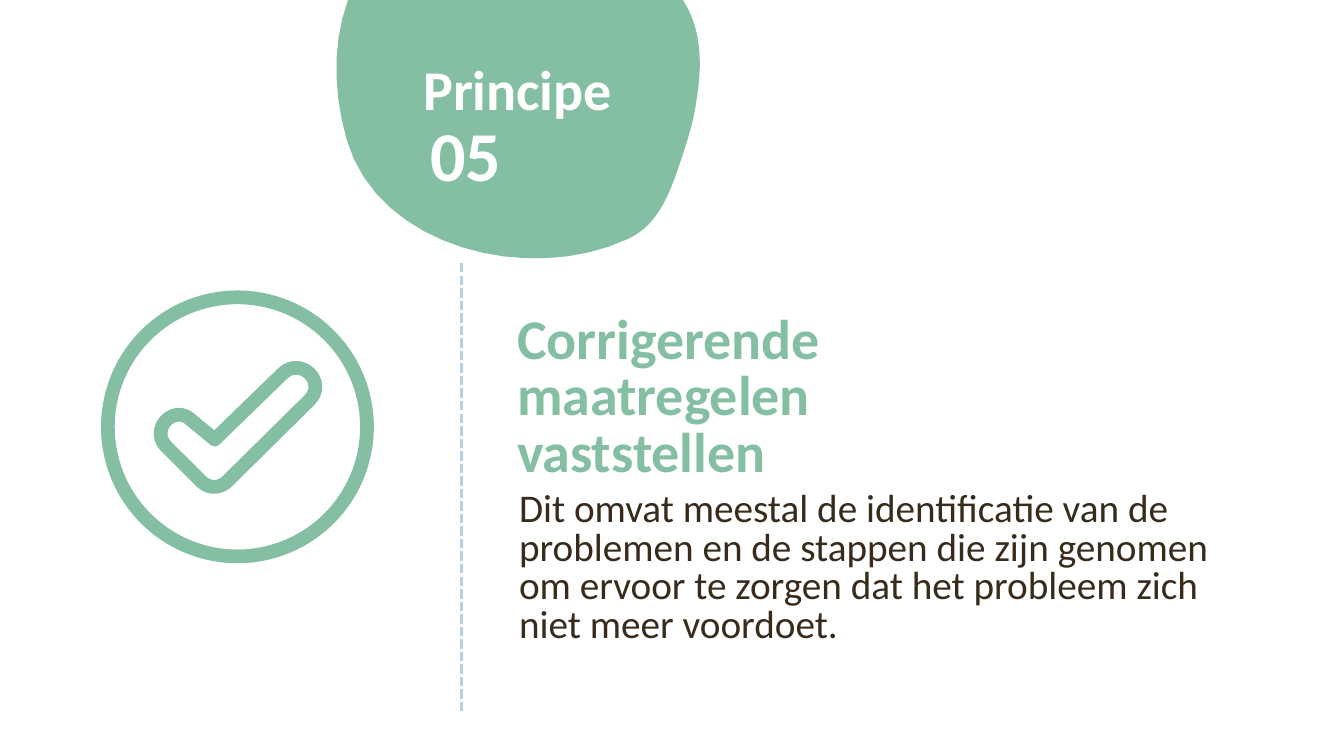
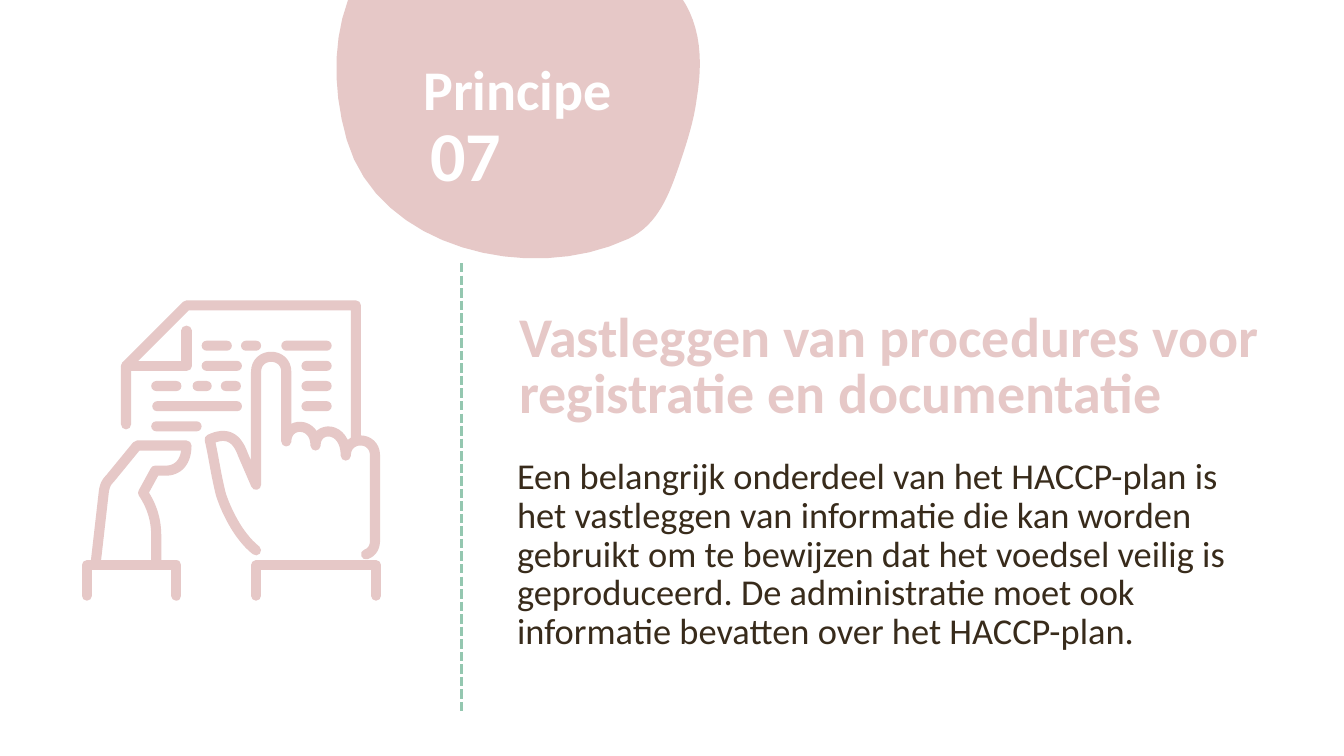
"""Build two slides that each present one HACCP principle."""
import dataclasses

import lxml.etree
import pptx
import pptx.dml.color
import pptx.enum.dml
import pptx.enum.shapes
import pptx.oxml.ns
import pptx.util


@dataclasses.dataclass(frozen=True)
class Theme:
    font: str = "Calibri"
    green: str = "84BFA4"
    pink: str = "E6C8C7"
    blue: str = "B6D1E1"
    mint: str = "94C7B0"
    brown: str = "382B1B"
    white: str = "FFFFFF"
    number: int = 50
    title: int = 40
    title_pitch: float = 40.2
    body_pitch: float = 27.6


COLS, ROWS = 1333, 750
theme = Theme()
rgb = pptx.dml.color.RGBColor.from_string
Pt = pptx.util.Pt
qn = pptx.oxml.ns.qn
shapes = pptx.enum.shapes.MSO_SHAPE

prs = pptx.Presentation()
prs.slide_width = pptx.util.Inches(13.33)
prs.slide_height = pptx.util.Inches(7.5)
col, row = prs.slide_width // COLS, prs.slide_height // ROWS


def add_text(s, text, x, y, w, h, size, color, bold=False, spacing=1.0):
    tf = s.shapes.add_textbox(x * col, y * row, w * col, h * row).text_frame
    tf.word_wrap = True
    p = tf.paragraphs[0]
    p.line_spacing = spacing
    p.space_before = Pt(0)
    r = p.add_run()
    r.text = text
    r.font.name, r.font.size, r.font.bold = theme.font, Pt(size), bold
    r.font.color.rgb = rgb(color)


def add_outline(s, points, color, width=None, closed=False, steps=16):
    """Draw corners (x, y) and cubic curves (x1, y1, x2, y2, x, y), filled or as a round stroke."""
    x, y = points[0]
    flat = []
    for point in points[1:]:
        if len(point) == 6:
            x1, y1, x2, y2, x3, y3 = point
            for i in range(1, steps + 1):
                t = i / steps
                a, b, c, d = (1 - t) ** 3, 3 * t * (1 - t) ** 2, 3 * t * t * (1 - t), t ** 3
                flat.append((a * x + b * x1 + c * x2 + d * x3, a * y + b * y1 + c * y2 + d * y3))
        else:
            flat.append(point)
        x, y = point[-2:]
    x, y = points[0]
    builder = s.shapes.build_freeform(x * col, y * row)
    builder.add_line_segments([(px * col, py * row) for px, py in flat], close=closed)
    sp = builder.convert_to_shape()
    sp.shadow.inherit = False
    if width is None:
        sp.fill.solid()
        sp.fill.fore_color.rgb = rgb(color)
        sp.line.fill.background()
    else:
        sp.fill.background()
        sp.line.color.rgb = rgb(color)
        sp.line.width = Pt(width)
        ln = sp._element.spPr.find(qn("a:ln"))
        ln.set("cap", "rnd")
        lxml.etree.SubElement(ln, qn("a:round"))


BLOB = [(691, 98), (699, 50, 694, 2, 648, -30), (603, -60, 534, -87, 479, -87),
        (353, -89, 312, 29, 344, 139), (375, 246, 525, 283, 623, 237),
        (653, 223, 664, 192, 674, 163), (681, 142, 688, 121, 691, 98)]
CHECK = [(213, 436), (280, 371), (298, 353, 325, 379, 307, 397), (226, 477),
         (218, 485, 207, 485, 199, 477), (165, 443), (148, 426, 173, 400, 190, 417)]
PAPER = [(125, 421), (125, 363), (185, 303), (353, 303), (353, 435)]
FOLD = [(185, 328), (185, 363), (125, 363)]
LEFT_HAND = [(95, 558), (103, 488), (104, 481, 106, 478, 109, 475), (136, 442), (185, 442),
             (185, 458, 177, 467, 164, 467), (154, 467), (142, 489),
             (152, 504, 155, 518, 155, 532), (155, 558)]
RIGHT_HAND = [(254, 546), (235, 531, 223, 503, 219, 490), (214, 470, 212, 453, 208, 436),
              (225, 428, 235, 434, 241, 451), (254, 481), (254, 369),
              (254, 349, 284, 349, 284, 369), (284, 438), (284, 418, 313, 418, 313, 442),
              (313, 422, 343, 422, 343, 452), (343, 432, 372, 432, 372, 452), (372, 536),
              (372, 543, 369, 548, 363, 550)]
CUFFS = [[(x1, 591), (x1, 561), (x2, 561), (x2, 591)] for x1, x2 in ((86, 175), (254, 373))]
TEXT_LINES = [[(200, 30), (239, 20), (279, 50)], [(200, 40), (299, 30)],
              [(150, 30), (191, 19), (219, 20), (299, 30)], [(151, 89), (299, 30)], [(150, 50)]]

slides = [
    dict(number="05", color=theme.green, dash=theme.blue,
         title="Corrigerende maatregelen vaststellen", title_at=(503, 307, 456, 187),
         body="Dit omvat meestal de identificatie van de problemen en de stappen die zijn "
              "genomen om ervoor te zorgen dat het probleem zich niet meer voordoet.",
         body_at=(505, 483, 729, 196), body_size=28,
         strokes=[CHECK], width=9.8, closed=True, ring=True, bars=[]),
    dict(number="07", color=theme.pink, dash=theme.mint,
         title="Vastleggen van procedures voor registratie en documentatie",
         title_at=(505, 305, 788, 187),
         body="Een belangrijk onderdeel van het HACCP-plan is het vastleggen van informatie "
              "die kan worden gebruikt om te bewijzen dat het voedsel veilig is geproduceerd. "
              "De administratie moet ook informatie bevatten over het HACCP-plan.",
         body_at=(503, 450, 772, 219), body_size=26,
         strokes=[PAPER, FOLD, LEFT_HAND, RIGHT_HAND, *CUFFS], width=7.2, closed=False,
         ring=False, bars=TEXT_LINES),
]

for item in slides:
    s = prs.slides.add_slide(prs.slide_layouts[6])
    color = item["color"]
    add_outline(s, BLOB, color, closed=True)
    add_text(s, item["title"], *item["title_at"], size=theme.title, color=color, bold=True,
             spacing=Pt(theme.title_pitch))
    add_text(s, item["body"], *item["body_at"], size=item["body_size"], color=theme.brown,
             spacing=Pt(theme.body_pitch))
    add_text(s, item["number"], 417, 115, 126, 94, size=theme.number, color=theme.white,
             bold=True, spacing=0.9)
    add_text(s, "Principe", 410, 62, 226, 67, size=theme.title, color=theme.white,
             bold=True, spacing=0.8)

    divider = s.shapes.add_connector(pptx.enum.shapes.MSO_CONNECTOR.STRAIGHT,
                                     458 * col, 261 * row, 458 * col, 707 * row)
    divider.line.color.rgb = rgb(item["dash"])
    divider.line.width = Pt(2.25)
    divider.line.dash_style = pptx.enum.dml.MSO_LINE.SQUARE_DOT
    lxml.etree.SubElement(divider._element.spPr, qn("a:effectLst"))

    for stroke in item["strokes"]:
        add_outline(s, stroke, color, width=item["width"], closed=item["closed"])
    if item["ring"]:
        sp = s.shapes.add_shape(shapes.OVAL, 107 * col, 295 * row, 257 * col, 257 * row)
        sp.shadow.inherit = False
        sp.fill.background()
        sp.line.color.rgb = rgb(color)
        sp.line.width = Pt(item["width"])
    for i, bars in enumerate(item["bars"]):
        for x, w in bars:
            sp = s.shapes.add_shape(shapes.ROUNDED_RECTANGLE,
                                    x * col, (338 + 20 * i) * row, w * col, 10 * row)
            sp.adjustments[0] = 0.5
            sp.shadow.inherit = False
            sp.fill.solid()
            sp.fill.fore_color.rgb = rgb(color)
            sp.line.fill.background()

prs.save("out.pptx")
